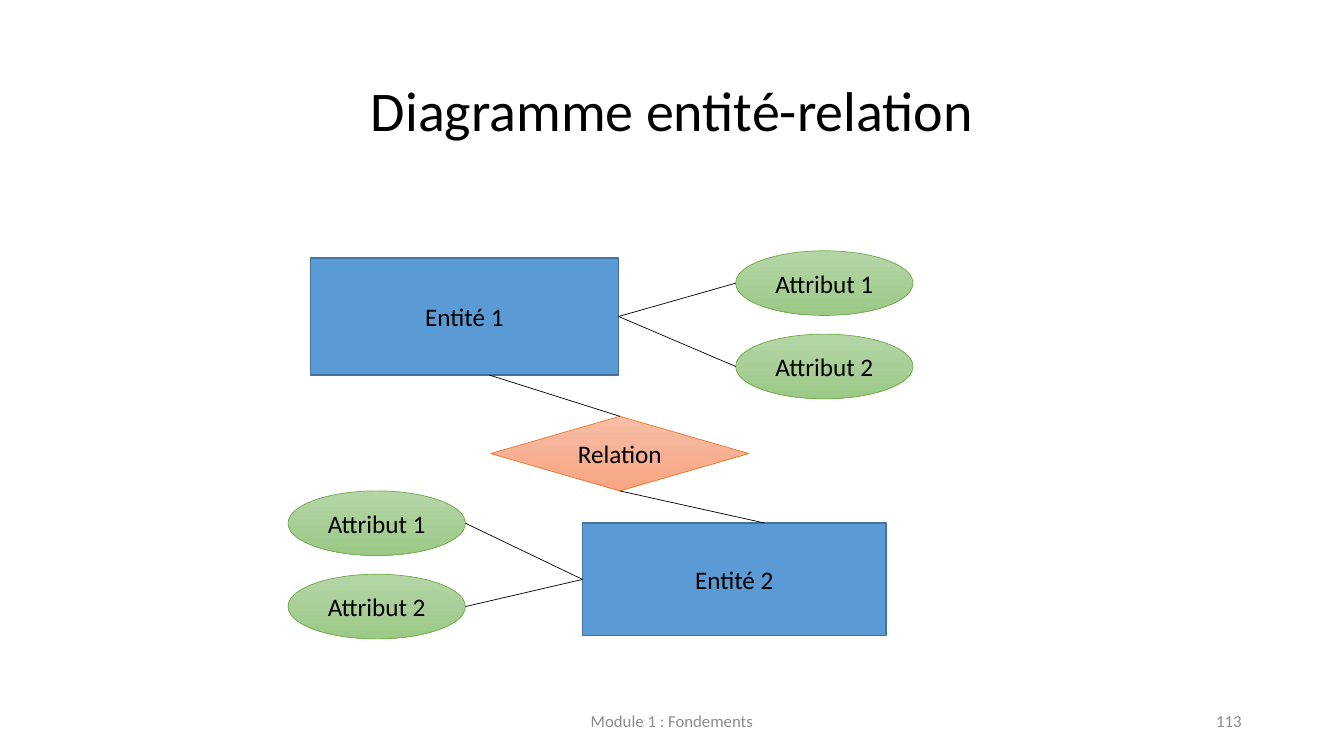
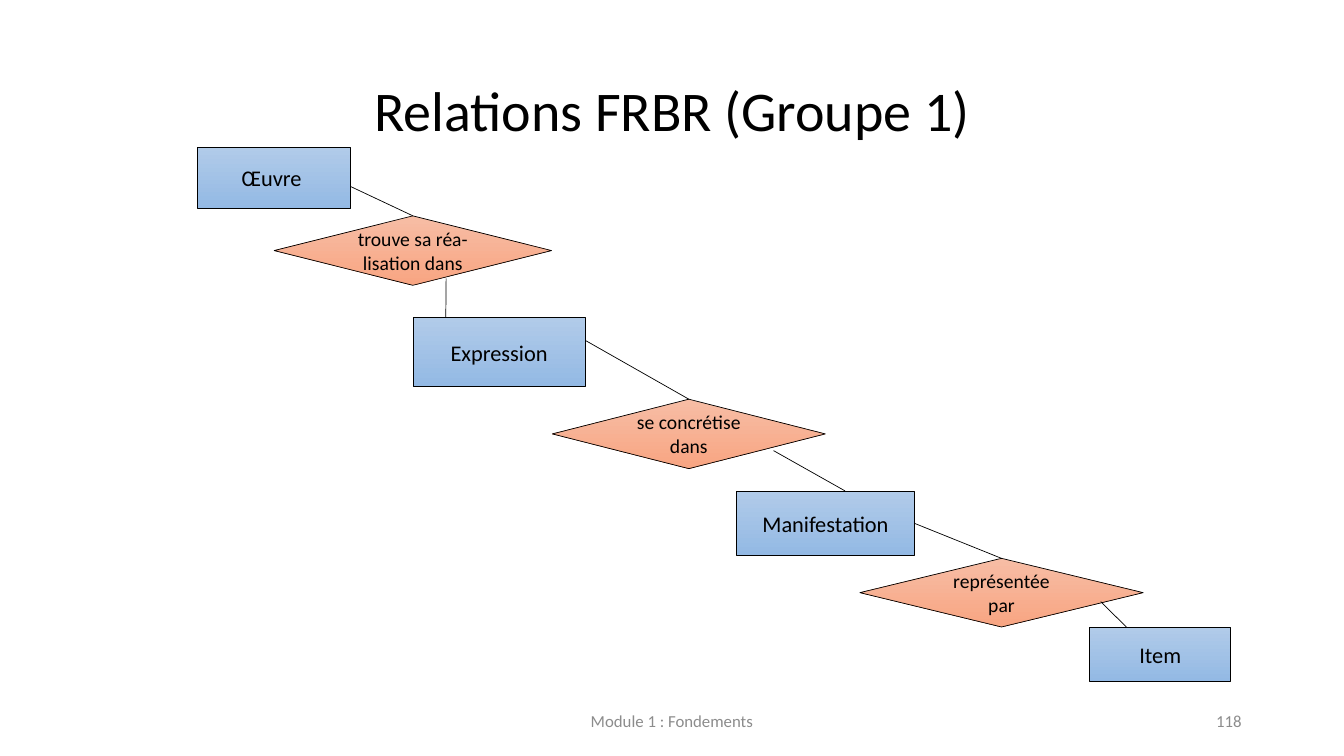
import pptx
import pptx.util
import pptx.dml.color
import pptx.enum.shapes
import pptx.enum.text
from pptx.oxml.xmlchemy import OxmlElement

Cm, Pt = pptx.util.Cm, pptx.util.Pt
RGB = pptx.dml.color.RGBColor
FORM = pptx.enum.shapes.MSO_SHAPE
ALIGN = pptx.enum.text.PP_ALIGN
MIDDLE = pptx.enum.text.MSO_ANCHOR.MIDDLE

FONT = "Calibri"
BLACK = RGB(0x00, 0x00, 0x00)
GREY = RGB(0x8C, 0x8C, 0x8C)
BLUE = RGB(0x5B, 0x9B, 0xD5)
NAVY = RGB(0x43, 0x73, 0x9E)
GREEN = RGB(0x70, 0xAD, 0x47)
ORANGE = RGB(0xED, 0x7D, 0x31)
SKY = (RGB(0xB1, 0xCB, 0xE9), RGB(0x93, 0xB9, 0xE4))
LEAF = (RGB(0xB5, 0xD5, 0xA7), RGB(0x9C, 0xC9, 0x87))
PEACH = (RGB(0xF7, 0xBD, 0xA5), RGB(0xF8, 0xA5, 0x82))

# All boxes are (left, top, width, height) in centimetres.
TITLE = (2.33, 1.02, 29.21, 3.68)
FOOTER = (11.22, 17.65, 11.43, 1.02)
NUMBER = (23.92, 17.65, 7.62, 1.02)
MODEL = (7.24, 6.32, 15.75, 9.8)
STAIRS = (4.98, 3.71, 26.04, 13.46)


def spot(box, across, down):
    """Point at the given fractions of a box's width and height."""
    left, top, width, height = box
    return left + across * width, top + down * height


def inside(area, box):
    """Move a box from an area's own coordinates to the slide's."""
    return (area[0] + box[0], area[1] + box[1], *box[2:])


def write(shape, text, size, color=BLACK, align=ALIGN.CENTER):
    frame = shape.text_frame
    frame.word_wrap = True
    frame.vertical_anchor = MIDDLE
    frame.text = text
    para = frame.paragraphs[0]
    para.alignment = align
    font = para.runs[0].font
    font.name, font.size, font.color.rgb = FONT, Pt(size), color
    return para


def label(slide, box, text, size, **style):
    shape = slide.shapes.add_textbox(*map(Cm, box))
    return write(shape, text, size, **style)


def node(slide, form, box, text, size, fill, edge=BLACK, weight=0.5):
    """Draw a labelled shape; a pair of colours as fill runs top to bottom."""
    shape = slide.shapes.add_shape(form, *map(Cm, box))
    shape.shadow.inherit = False
    if isinstance(fill, RGB):
        shape.fill.solid()
        shape.fill.fore_color.rgb = fill
    else:
        shape.fill.gradient()
        shape.fill.gradient_angle = 270
        for stop, color in zip(shape.fill.gradient_stops, fill):
            stop.color.rgb = color
    shape.line.color.rgb = edge
    shape.line.width = Pt(weight)
    write(shape, text, size)


def link(slide, start, end):
    straight = pptx.enum.shapes.MSO_CONNECTOR.STRAIGHT
    line = slide.shapes.add_connector(straight, *map(Cm, start + end))
    line.line.color.rgb = BLACK
    line.line.width = Pt(0.5)
    line._element.spPr.append(OxmlElement("a:effectLst"))


def page(deck, title, number):
    """Add a slide with its title, footer and number."""
    slide = deck.slides.add_slide(deck.slide_layouts[6])
    label(slide, TITLE, title, 40).line_spacing = 0.9
    label(slide, FOOTER, "Module 1 : Fondements", 12, color=GREY)
    label(slide, NUMBER, str(number), 12, color=GREY, align=ALIGN.RIGHT)
    return slide


def entity(slide, box, text, side, rise):
    """Draw an entity with two attributes on its left (0) or right (1)."""
    node(slide, FORM.RECTANGLE, box, text, 18, BLUE, NAVY, 1)
    wide, high, gap, step = 4.47, 1.63, 2.95, 2.1
    left = box[0] + (box[2] + gap if side else -gap - wide)
    for row in range(2):
        oval = (left, box[1] - rise + row * step, wide, high)
        node(slide, FORM.OVAL, oval, f"Attribut {row + 1}", 18, LEAF, GREEN)
        link(slide, spot(oval, 1 - side, 0.5), spot(box, side, 0.5))


def model(slide, area):
    """Draw two entities joined by a relation."""
    first = inside(area, (0.58, 0.18, 7.77, 2.95))
    second = inside(area, (7.44, 6.86, 7.65, 2.84))
    bond = inside(area, (5.13, 4.17, 6.5, 1.88))
    entity(slide, first, "Entité 1", 1, 0.18)
    entity(slide, second, "Entité 2", 0, 0.81)
    node(slide, FORM.FLOWCHART_DECISION, bond, "Relation", 18, PEACH, ORANGE)
    link(slide, spot(first, 0.58, 1), spot(bond, 0.5, 0))
    link(slide, spot(bond, 0.5, 1), spot(second, 0.6, 0))


def stairs(slide, area, steps, bonds):
    """Draw entities going down, each joined to the next by a relation."""
    boxes = [inside(area, box) for _, box in steps]
    for (text, _), box in zip(steps, boxes):
        node(slide, FORM.RECTANGLE, box, text, 16, SKY)
    for (text, place, leave, out, land), upper, lower in zip(
            bonds, boxes, boxes[1:]):
        box = inside(area, place)
        node(slide, FORM.FLOWCHART_DECISION, box, text, 14, PEACH)
        link(slide, spot(upper, 1, leave), spot(box, 0.5, 0))
        link(slide, spot(box, *out), spot(lower, land, 0))


STEPS = [
    ("Œuvre ", (0, 0, 3.86, 1.55)),
    ("Expression", (5.43, 4.29, 4.34, 1.75)),
    ("Manifestation", (13.59, 8.66, 4.47, 1.63)),
    ("Item", (22.48, 12.09, 3.56, 1.37)),
]
# Text, box, height where the link leaves the entity above,
# point where it leaves the relation, place where it lands below.
BONDS = [
    ("trouve sa réa-lisation dans", (1.93, 1.73, 6.99, 1.75),
     0.64, (0.62, 0.9), 0.19),
    ("se concrétise dans", (8.94, 6.35, 6.88, 1.75),
     0.33, (0.81, 0.74), 0.61),
    ("représentée par", (16.69, 10.36, 7.14, 1.73),
     0.5, (0.85, 0.63), 0.26),
]


def main():
    deck = pptx.Presentation()
    deck.slide_width, deck.slide_height = Cm(33.87), Cm(19.05)
    model(page(deck, "Diagramme entité-relation", 113), MODEL)
    stairs(page(deck, "Relations FRBR (Groupe 1)", 118), STAIRS, STEPS, BONDS)
    deck.save("out.pptx")


if __name__ == "__main__":
    main()
